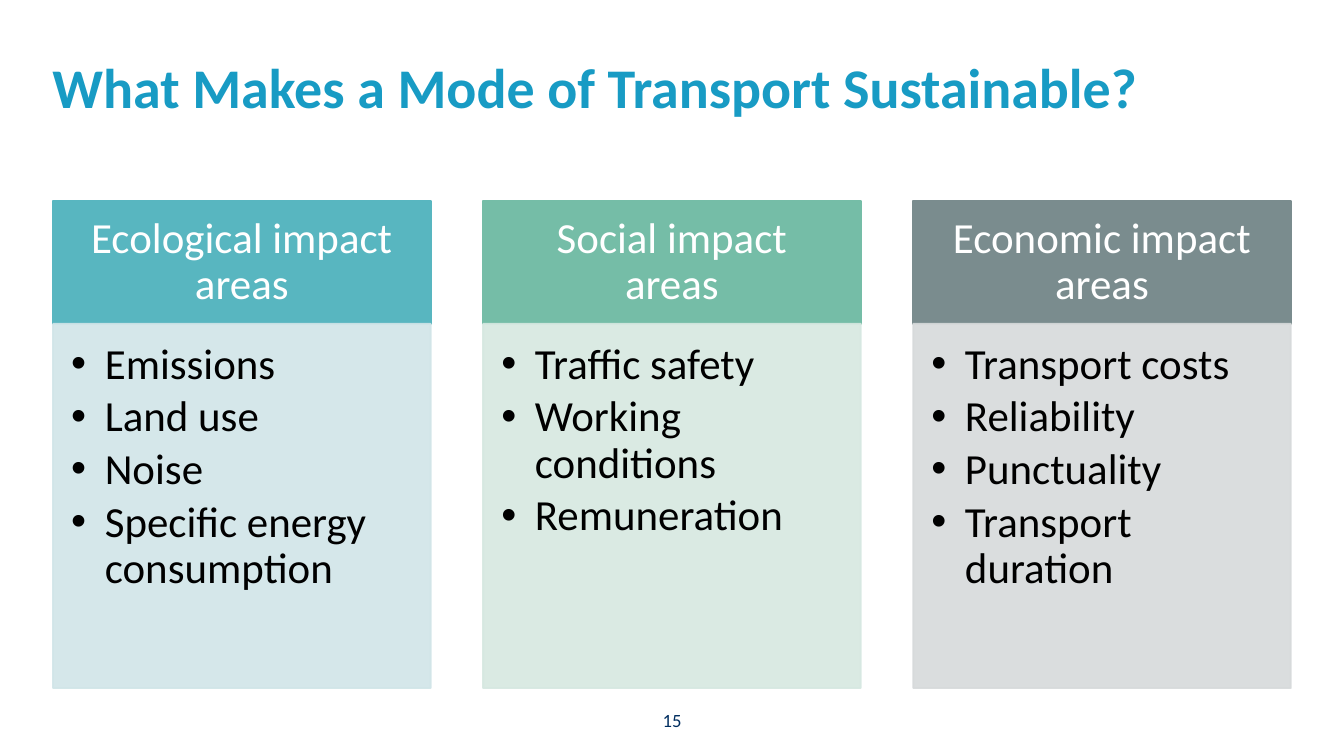
from dataclasses import dataclass

from lxml import etree
from pptx import Presentation
from pptx.dml.color import RGBColor
from pptx.enum.shapes import MSO_SHAPE
from pptx.enum.text import MSO_ANCHOR, MSO_AUTO_SIZE, PP_ALIGN
from pptx.oxml.ns import qn
from pptx.util import Pt

RECT = MSO_SHAPE.RECTANGLE
TOP, MIDDLE = MSO_ANCHOR.TOP, MSO_ANCHOR.MIDDLE
LEFT, CENTER = PP_ALIGN.LEFT, PP_ALIGN.CENTER
NO_FIT = MSO_AUTO_SIZE.NONE
COMPARISON_LAYOUT = 4
PX = 4572


@dataclass(frozen=True)
class Theme:
    font: str = "Calibri"
    title: str = "189BC4"
    number: str = "002E60"
    light: str = "FFFFFF"
    dark: str = "000000"
    title_size: int = 30
    text_size: int = 23
    number_size: int = 10
    panel_alpha: int = 90


@dataclass(frozen=True)
class ImpactArea:
    heading: str
    items: tuple[str, ...]
    header_color: str
    panel_color: str


THEME = Theme()
AREAS = (
    ImpactArea("Ecological impact areas",
               ("Emissions", "Land use", "Noise", "Specific energy consumption"),
               "58B6C0", "D1E5E8"),
    ImpactArea("Social impact areas",
               ("Traffic safety", "Working conditions", "Remuneration"),
               "75BDA7", "D6E8E1"),
    ImpactArea("Economic impact areas",
               ("Transport costs", "Reliability", "Punctuality", "Transport duration"),
               "7A8C8E", "D7DADB"),
)
COL_X, COL_STEP, COL_W = 79, 640, 562
HEADER_Y, HEADER_H, PANEL_H = 299, 183, 542
BULLET_INDENT = 50


def place(sp, x: int, y: int, w: int, h: int) -> None:
    sp.left, sp.top, sp.width, sp.height = (v * PX for v in (x, y, w, h))


def paint(sp, color: str, alpha: int = 100) -> None:
    sp.fill.solid()
    sp.fill.fore_color.rgb = RGBColor.from_string(color)
    sp.line.color.rgb = RGBColor.from_string(color)
    sp.line.width = Pt(1)
    if alpha < 100:
        for clr in sp._element.spPr.iter(qn("a:srgbClr")):
            etree.SubElement(clr, qn("a:alpha"), val=str(alpha * 1000))


def add_bullet(p) -> None:
    pPr = p._p.get_or_add_pPr()
    pPr.set("marL", str(BULLET_INDENT * PX))
    pPr.set("indent", str(-BULLET_INDENT * PX))
    etree.SubElement(pPr, qn("a:buChar"), char="•")


def write(sp, *lines: str, size: int, color: str, bold: bool = False,
          align: PP_ALIGN = LEFT, anchor: MSO_ANCHOR = TOP,
          insets: tuple[int, int, int, int] = (0, 0, 0, 0),
          spacing: float = 1.0, after: float = 0, bullets: bool = False) -> None:
    tf = sp.text_frame
    tf.word_wrap = True
    tf.auto_size = NO_FIT
    tf.vertical_anchor = anchor
    tf.margin_left, tf.margin_top, tf.margin_right, tf.margin_bottom = (
        v * PX for v in insets)
    for i, line in enumerate(lines):
        p = tf.add_paragraph() if i else tf.paragraphs[0]
        if bullets:
            add_bullet(p)
        p.alignment = align
        p.line_spacing = spacing
        p.space_before, p.space_after = Pt(0), Pt(after)
        r = p.add_run()
        r.text = line
        r.font.name, r.font.size, r.font.bold = THEME.font, Pt(size), bold
        r.font.color.rgb = RGBColor.from_string(color)


def draw_area(s, panel, area: ImpactArea, x: int) -> None:
    header = s.shapes.add_shape(RECT, 0, 0, 0, 0)
    header.shadow.inherit = False
    place(header, x, HEADER_Y, COL_W, HEADER_H)
    paint(header, area.header_color)
    write(header, area.heading, size=THEME.text_size, color=THEME.light,
          align=CENTER, anchor=MIDDLE, insets=(36, 20, 36, 20), spacing=0.9)
    panel._element.addprevious(header._element)

    place(panel, x, HEADER_Y + HEADER_H, COL_W, PANEL_H)
    paint(panel, area.panel_color, THEME.panel_alpha)
    write(panel, *area.items, size=THEME.text_size, color=THEME.dark,
          insets=(27, 27, 36, 40), spacing=0.9, after=3.4, bullets=True)


def main() -> None:
    prs = Presentation()
    prs.slide_width, prs.slide_height = 2000 * PX, 1125 * PX
    s = prs.slides.add_slide(prs.slide_layouts[COMPARISON_LAYOUT])

    title, *panels = s.placeholders
    place(title, 78, 78, 1654, 204)
    write(title, "What Makes a Mode of Transport Sustainable?",
          size=THEME.title_size, color=THEME.title, bold=True)

    for i, (panel, area) in enumerate(zip(panels, AREAS)):
        draw_area(s, panel, area, COL_X + i * COL_STEP)
    for spare in panels[len(AREAS):]:
        spare._element.getparent().remove(spare._element)

    number = s.shapes.add_textbox(0, 0, 0, 0)
    place(number, 921, 1041, 158, 62)
    write(number, "15", size=THEME.number_size, color=THEME.number,
          align=CENTER, anchor=MIDDLE)

    prs.save("out.pptx")


if __name__ == "__main__":
    main()
